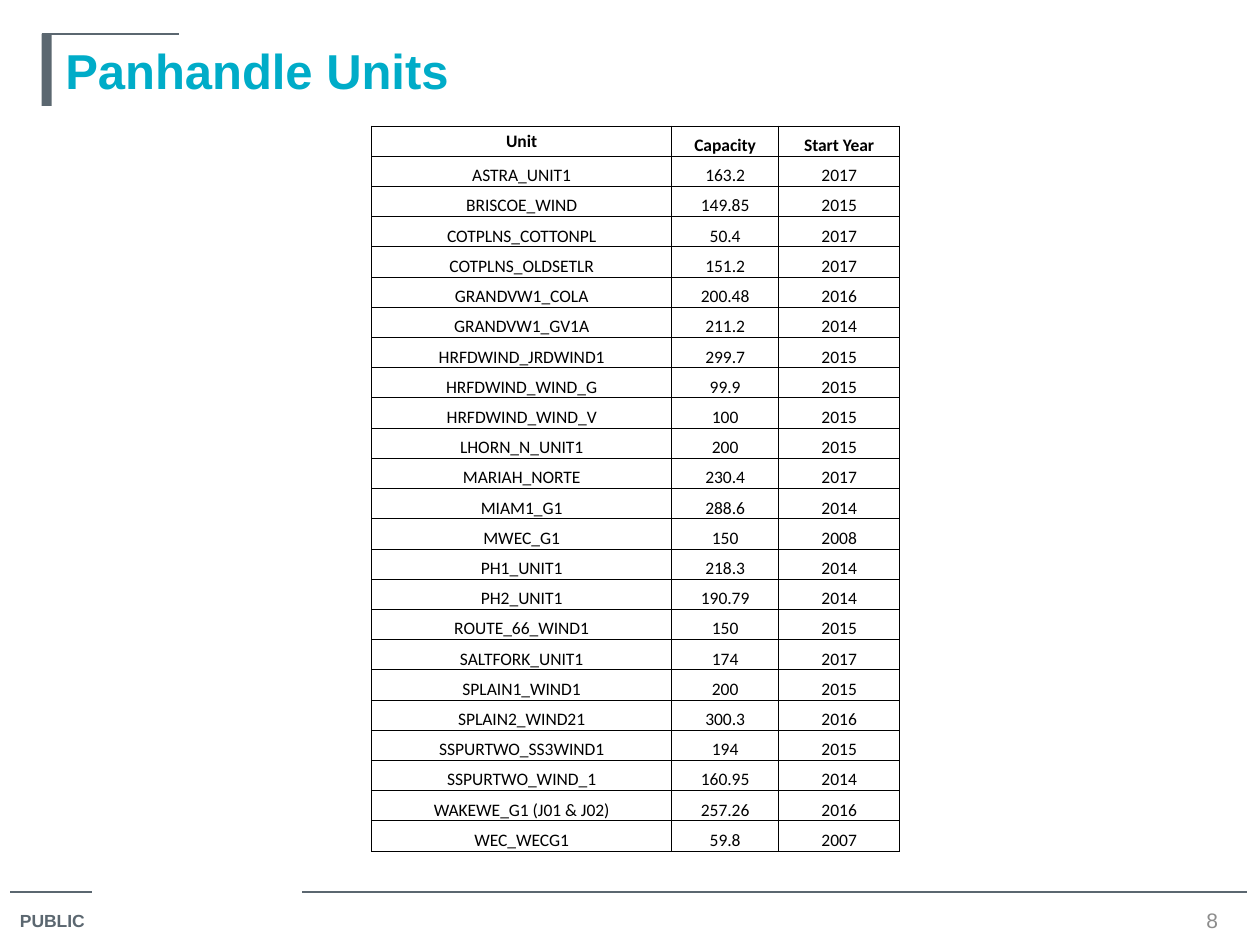
from lxml import etree
from pptx import Presentation
from pptx.dml.color import RGBColor
from pptx.enum.shapes import MSO_CONNECTOR, MSO_SHAPE
from pptx.enum.text import MSO_ANCHOR, PP_ALIGN
from pptx.oxml.ns import qn
from pptx.util import Inches, Pt

RECT, STRAIGHT = MSO_SHAPE.RECTANGLE, MSO_CONNECTOR.STRAIGHT
TOP, MIDDLE, BOTTOM = MSO_ANCHOR.TOP, MSO_ANCHOR.MIDDLE, MSO_ANCHOR.BOTTOM
LEFT, CENTER = PP_ALIGN.LEFT, PP_ALIGN.CENTER
SLATE, TEAL, GRAY, BLACK = "5B6770", "00ACC8", "8C8C8C", "000000"

HEADERS = ("Unit", "Capacity", "Start Year")
UNITS = [
    ("ASTRA_UNIT1", "163.2", "2017"),
    ("BRISCOE_WIND", "149.85", "2015"),
    ("COTPLNS_COTTONPL", "50.4", "2017"),
    ("COTPLNS_OLDSETLR", "151.2", "2017"),
    ("GRANDVW1_COLA", "200.48", "2016"),
    ("GRANDVW1_GV1A", "211.2", "2014"),
    ("HRFDWIND_JRDWIND1", "299.7", "2015"),
    ("HRFDWIND_WIND_G", "99.9", "2015"),
    ("HRFDWIND_WIND_V", "100", "2015"),
    ("LHORN_N_UNIT1", "200", "2015"),
    ("MARIAH_NORTE", "230.4", "2017"),
    ("MIAM1_G1", "288.6", "2014"),
    ("MWEC_G1", "150", "2008"),
    ("PH1_UNIT1", "218.3", "2014"),
    ("PH2_UNIT1", "190.79", "2014"),
    ("ROUTE_66_WIND1", "150", "2015"),
    ("SALTFORK_UNIT1", "174", "2017"),
    ("SPLAIN1_WIND1", "200", "2015"),
    ("SPLAIN2_WIND21", "300.3", "2016"),
    ("SSPURTWO_SS3WIND1", "194", "2015"),
    ("SSPURTWO_WIND_1", "160.95", "2014"),
    ("WAKEWE_G1 (J01 & J02)", "257.26", "2016"),
    ("WEC_WECG1", "59.8", "2007"),
]


def rgb(color):
    return RGBColor.from_string(color)


class SlideBuilder:
    font, table_font = "Arial", "Calibri"

    def __init__(self, slide):
        self.s = slide

    def style(self, p, size, color, bold, align, font):
        p.alignment = align
        p.font.name, p.font.size, p.font.bold = font, Pt(size), bold
        p.font.color.rgb = rgb(color)

    def line(self, x1, y1, x2, y2):
        ends = [Inches(v) for v in (x1, y1, x2, y2)]
        ln = self.s.shapes.add_connector(STRAIGHT, *ends)
        ln.line.color.rgb = rgb(SLATE)
        ln.line.width = Pt(0.75)
        etree.SubElement(ln._element.spPr, qn("a:effectLst"))

    def bar(self, *box):
        sp = self.s.shapes.add_shape(RECT, *[Inches(v) for v in box])
        sp.shadow.inherit = False
        sp.fill.solid()
        sp.fill.fore_color.rgb = rgb(SLATE)
        sp.line.fill.background()

    def text(self, text, box, size, color, bold=False, align=LEFT, anchor=TOP, wrap=True):
        tf = self.s.shapes.add_textbox(*[Inches(v) for v in box]).text_frame
        tf.word_wrap = wrap
        tf.vertical_anchor = anchor
        tf.text = text
        self.style(tf.paragraphs[0], size, color, bold, align, self.font)

    def border(self, cell):
        tcPr = cell._tc.get_or_add_tcPr()
        for side in ("a:lnL", "a:lnR", "a:lnT", "a:lnB"):
            ln = etree.SubElement(tcPr, qn(side), w=str(Pt(0.5)))
            fill = etree.SubElement(ln, qn("a:solidFill"))
            etree.SubElement(fill, qn("a:srgbClr"), val=BLACK)

    def table(self, rows, x, y, widths, row_height):
        size = (sum(widths), row_height * len(rows))
        frame = self.s.shapes.add_table(
            len(rows), len(widths), *[Inches(v) for v in (x, y, *size)])
        table = frame.table
        table.horz_banding = False
        for col, width in zip(table.columns, widths):
            col.width = Inches(width)
        for i, values in enumerate(rows):
            table.rows[i].height = Inches(row_height)
            for j, value in enumerate(values):
                cell = table.cell(i, j)
                cell.text = value
                cell.margin_left = cell.margin_right = cell.margin_top = Inches(0.01)
                cell.margin_bottom = 0
                cell.vertical_anchor = MIDDLE if i == j == 0 else BOTTOM
                self.style(cell.text_frame.paragraphs[0], 10, BLACK, i == 0,
                           CENTER, self.table_font)
                self.border(cell)
                cell.fill.background()


def main():
    prs = Presentation()
    prs.slide_width, prs.slide_height = Inches(10), Inches(7.5)
    b = SlideBuilder(prs.slides.add_slide(prs.slide_layouts[6]))

    # Footer
    b.line(0.08, 7.08, 0.73, 7.08)
    b.line(2.4, 7.08, 9.9, 7.08)
    b.text("PUBLIC", (0.06, 7.17, 0.77, 0.28), 10, SLATE, bold=True, wrap=False)

    # Title with its corner mark
    b.bar(0.33, 0.27, 0.08, 0.57)
    b.line(0.33, 0.27, 1.42, 0.27)
    b.text("Panhandle Units", (0.42, 0.27, 9.25, 0.57), 28, TEAL, bold=True, anchor=BOTTOM)

    # Slide number
    b.text("8", (9.33, 7.18, 0.58, 0.24), 12, GRAY, align=CENTER, anchor=MIDDLE)

    # Unit table
    b.table([HEADERS, *UNITS], 2.95, 1, (2.38, 0.85, 0.96), 0.24)

    prs.save("out.pptx")


if __name__ == "__main__":
    main()
